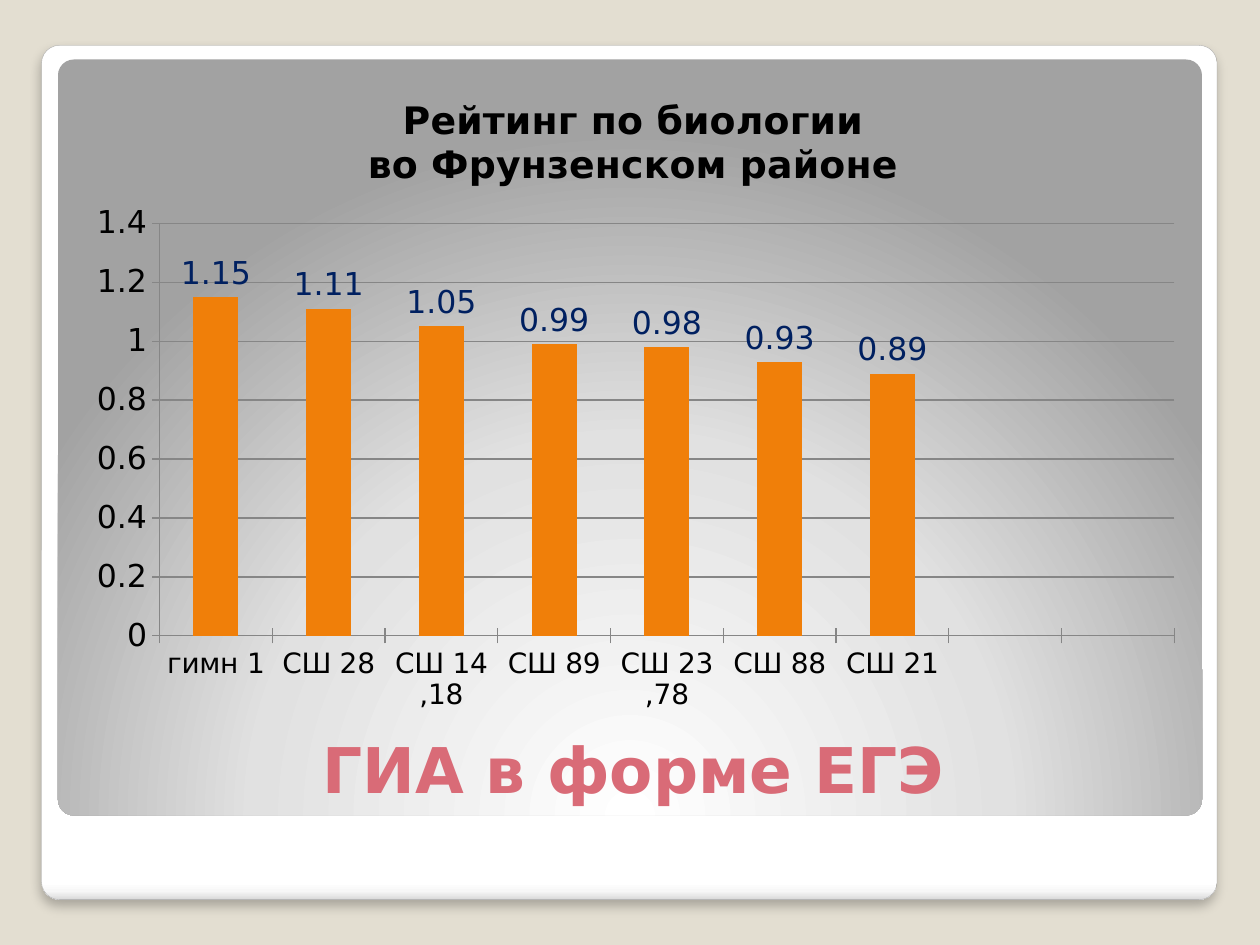
from dataclasses import dataclass

from lxml import etree
from pptx import Presentation
from pptx.chart.data import CategoryChartData
from pptx.dml.color import RGBColor
from pptx.enum.chart import XL_CHART_TYPE, XL_LABEL_POSITION, XL_TICK_MARK
from pptx.enum.shapes import MSO_SHAPE
from pptx.enum.text import MSO_ANCHOR, PP_ALIGN
from pptx.oxml import parse_xml
from pptx.oxml.ns import nsdecls, qn
from pptx.util import Inches, Pt

ROUND_RECT = MSO_SHAPE.ROUNDED_RECTANGLE
COLUMN = XL_CHART_TYPE.COLUMN_CLUSTERED
OUTSIDE_END = XL_LABEL_POSITION.OUTSIDE_END
CROSS = XL_TICK_MARK.CROSS
BOTTOM = MSO_ANCHOR.BOTTOM
CENTER = PP_ALIGN.CENTER


@dataclass(frozen=True)
class Theme:
    font: str = "DejaVu Sans"
    background: str = "E3DED1"
    frame_line: str = "A4A4A4"
    heading: str = "D96B77"
    text: str = "000000"
    bar: str = "F07F09"
    label: str = "002060"
    grid: str = "868686"
    heading_size: float = 36
    title_size: float = 21.6
    chart_size: float = 18
    category_size: float = 16


class Deck:
    """Draws styled elements on the current slide, placed by shares of its size."""

    def __init__(self, theme, width, height):
        self.theme = theme
        self.prs = Presentation()
        self.prs.slide_width, self.prs.slide_height = Inches(width), Inches(height)

    def add_slide(self):
        self.s = self.prs.slides.add_slide(self.prs.slide_layouts[6])
        fill = self.s.background.fill
        fill.solid()
        fill.fore_color.rgb = RGBColor.from_string(self.theme.background)

    def box(self, x, y, w, h):
        width, height = self.prs.slide_width, self.prs.slide_height
        return int(x * width), int(y * height), int(w * width), int(h * height)

    def style(self, font, size, color, bold=False):
        font.name, font.size, font.bold = self.theme.font, Pt(size), bold
        font.color.rgb = RGBColor.from_string(color)

    def panel(self, area, stops, direction, line=None, shadow=False):
        sp = self.s.shapes.add_shape(ROUND_RECT, *self.box(*area))
        sp.adjustments[0] = 0.021
        sp.shadow.inherit = False
        props = sp.element.spPr
        marks = "".join(
            f'<a:gs pos="{share * 1000}"><a:srgbClr val="{color}"/></a:gs>' for share, color in stops
        )
        props.insert(2, parse_xml(
            f'<a:gradFill {nsdecls("a")} rotWithShape="1"><a:gsLst>{marks}</a:gsLst>{direction}</a:gradFill>'
        ))
        if line:
            sp.line.color.rgb = RGBColor.from_string(line)
            sp.line.width = Pt(0.16)
        else:
            sp.line.fill.background()
        if shadow:
            effects = props.find(qn("a:effectLst"))
            outer = etree.SubElement(
                effects, qn("a:outerShdw"), blurRad=str(Pt(6)), dist=str(Pt(4)), dir="5400000", rotWithShape="0"
            )
            color = etree.SubElement(outer, qn("a:srgbClr"), val="000000")
            etree.SubElement(color, qn("a:alpha"), val="25000")

    def heading(self, area, text):
        tf = self.s.shapes.add_textbox(*self.box(*area)).text_frame
        tf.word_wrap = True
        tf.vertical_anchor = BOTTOM
        tf.margin_bottom = 0
        p = tf.paragraphs[0]
        p.alignment = CENTER
        r = p.add_run()
        r.text = text
        self.style(r.font, self.theme.heading_size, self.theme.heading, True)

    def column_chart(self, area, title, categories, values, plot_area):
        t = self.theme
        data = CategoryChartData()
        data.categories = categories
        data.add_series("Series 1", values)
        chart = self.s.shapes.add_chart(COLUMN, *self.box(*area), data).chart
        self.style(chart.font, t.chart_size, t.text)
        chart.has_legend = False
        self.chart_title(chart, title)

        plot = chart.plots[0]
        plot.gap_width = 150
        plot.vary_by_categories = False
        fill = plot.series[0].format.fill
        fill.solid()
        fill.fore_color.rgb = RGBColor.from_string(t.bar)
        plot.has_data_labels = True
        labels = plot.data_labels
        labels.show_value = True
        labels.position = OUTSIDE_END
        self.style(labels.font, t.chart_size, t.label)

        value_axis = chart.value_axis
        value_axis.minimum_scale, value_axis.maximum_scale, value_axis.major_unit = 0, 1.4, 0.2
        value_axis.has_major_gridlines = True
        axes = ((chart.category_axis, t.category_size), (value_axis, t.chart_size))
        for axis, size in axes:
            axis.major_tick_mark = CROSS
            self.style(axis.tick_labels.font, size, t.text)
        for part in (chart.category_axis, value_axis, value_axis.major_gridlines):
            part.format.line.color.rgb = RGBColor.from_string(t.grid)
            part.format.line.width = Pt(0.75)
        self.place_plot(chart, plot_area)

    def chart_title(self, chart, lines):
        chart.has_title = True
        chart.chart_title.include_in_layout = False
        tf = chart.chart_title.text_frame
        for i, line in enumerate(lines):
            p = tf.add_paragraph() if i else tf.paragraphs[0]
            r = p.add_run()
            r.text = line
            self.style(r.font, self.theme.title_size, self.theme.text, True)

    def place_plot(self, chart, area):
        plot_area = chart.element.find(".//" + qn("c:plotArea"))
        for old in plot_area.findall(qn("c:layout")):
            plot_area.remove(old)
        layout = etree.Element(qn("c:layout"))
        manual = etree.SubElement(layout, qn("c:manualLayout"))
        settings = [("layoutTarget", "inner"), ("xMode", "edge"), ("yMode", "edge"), *zip("xywh", area)]
        for name, value in settings:
            etree.SubElement(manual, qn(f"c:{name}"), val=str(value))
        plot_area.insert(0, layout)


def main():
    theme = Theme()
    deck = Deck(theme, 10, 7.5)
    deck.add_slide()
    deck.panel(
        (0.033, 0.048, 0.933, 0.904),
        [(0, "FFFFFF"), (98, "FFFFFF"), (99, "F7F7F7"), (100, "DADADA")],
        '<a:lin ang="5400000" scaled="0"/>',
        line=theme.frame_line,
        shadow=True,
    )
    deck.panel(
        (0.046, 0.063, 0.908, 0.8),
        [(0, "FFFFFF"), (55, "E1E1E1"), (100, "A2A2A2")],
        '<a:path path="circle"><a:fillToRect l="50000" t="175000" r="50000" b="-75000"/></a:path>',
    )
    deck.heading((0.055, 0.697, 0.895, 0.156), "ГИА в форме ЕГЭ")
    deck.column_chart(
        (0.055, 0.077, 0.895, 0.693),
        ["Рейтинг по биологии", "во Фрунзенском районе"],
        ["гимн 1", "СШ 28", "СШ 14 ,18", "СШ 89", "СШ 23 ,78", "СШ 88", "СШ 21", "", ""],
        [1.15, 1.11, 1.05, 0.99, 0.98, 0.93, 0.89, None, None],
        plot_area=(0.08, 0.23, 0.9, 0.63),
    )
    deck.prs.save("out.pptx")


if __name__ == "__main__":
    main()
